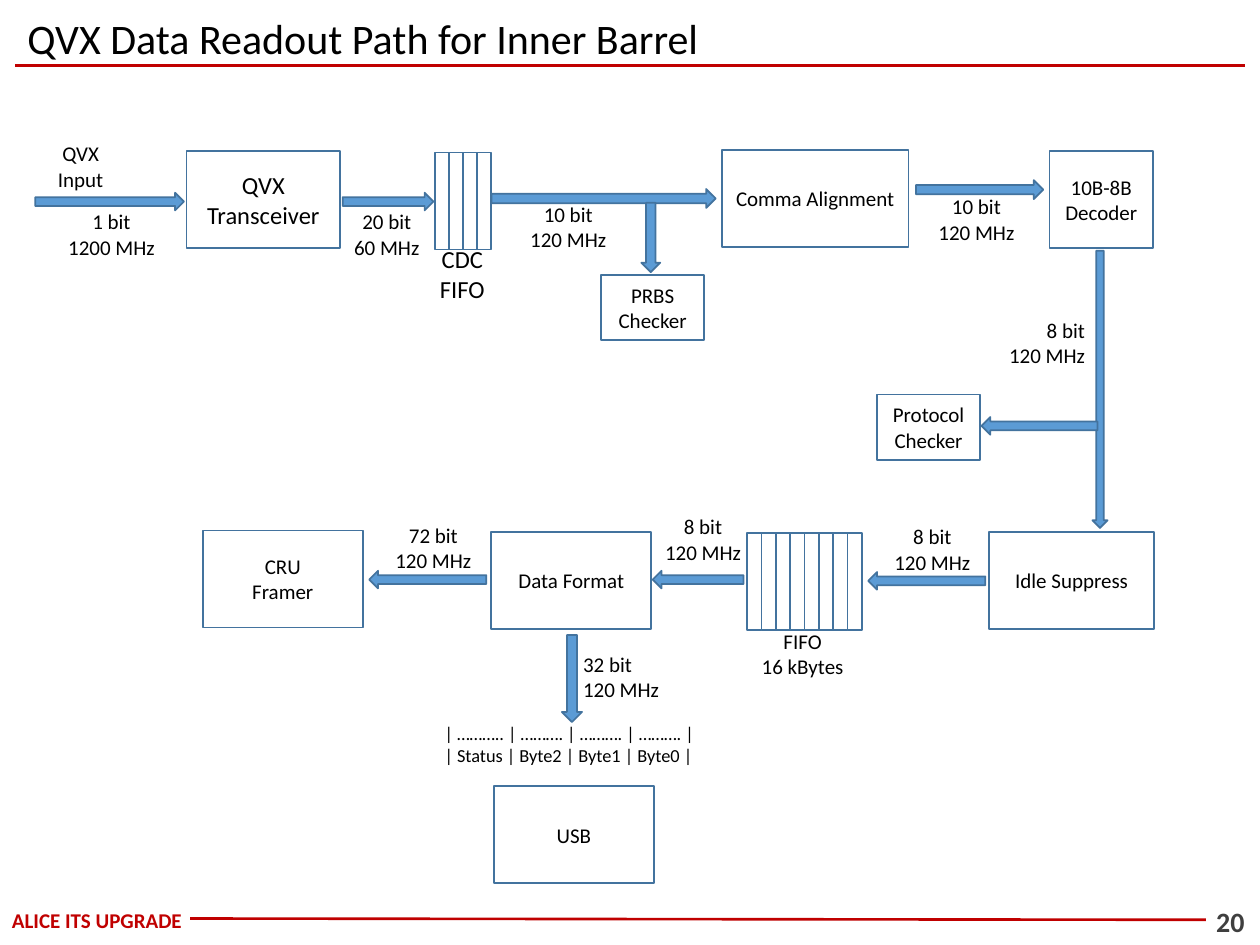
from dataclasses import dataclass

from lxml import etree
from pptx import Presentation
from pptx.dml.color import RGBColor
from pptx.enum.shapes import MSO_CONNECTOR, MSO_SHAPE
from pptx.enum.text import MSO_ANCHOR, PP_ALIGN
from pptx.oxml.ns import qn
from pptx.util import Inches, Pt

RECT = MSO_SHAPE.RECTANGLE
RIGHT, DOWN = MSO_SHAPE.RIGHT_ARROW, MSO_SHAPE.DOWN_ARROW
STRAIGHT = MSO_CONNECTOR.STRAIGHT
TOP, MIDDLE, BOTTOM = MSO_ANCHOR.TOP, MSO_ANCHOR.MIDDLE, MSO_ANCHOR.BOTTOM
AL_LEFT, AL_CENTER, AL_RIGHT = PP_ALIGN.LEFT, PP_ALIGN.CENTER, PP_ALIGN.RIGHT

FONT = "Calibri"
BLACK, GRAY, RED = "000000", "3F3F3F", "C00000"
BLUE, OUTLINE = "5B9BD5", "43739E"
BLOCK_H = 0.77


@dataclass
class Block:
    text: str
    x: float
    y: float
    w: float
    h: float = BLOCK_H
    size: float = 12


@dataclass
class Arrow:
    x: float
    y: float
    w: float
    h: float = 0.14
    kind: int = RIGHT
    rotation: float = 0


@dataclass
class Label:
    text: str
    x: float
    y: float
    w: float = 0.86
    h: float = 0.5
    size: float = 12
    align: int = AL_CENTER
    anchor: int = TOP
    color: str = BLACK
    bold: bool = False
    wrap: bool = True
    insets: tuple = (0.1, 0.05, 0.1, 0.05)


@dataclass
class Fifo:
    x: float
    y: float
    w: float
    cells: int


@dataclass
class Rule:
    x1: float
    y1: float
    x2: float
    y2: float
    width: float


BLOCKS = [
    Block("QVX\nTransceiver", 1.48, 1.2, 1.22, size=14),
    Block("Comma Alignment", 5.73, 1.19, 1.48),
    Block("10B-8B\nDecoder", 8.33, 1.2, 0.82),
    Block("PRBS\nChecker", 4.77, 2.18, 0.82, 0.52),
    Block("Protocol\nChecker", 6.96, 3.13, 0.82, 0.52),
    Block("Idle Suppress", 7.85, 4.22, 1.31),
    Block("Data Format", 3.9, 4.22, 1.27),
    Block("CRU\nFramer", 1.61, 4.21, 1.27),
    Block("USB", 3.92, 6.24, 1.27),
]
FIFOS = [Fifo(3.45, 1.21, 0.45, 4), Fifo(5.93, 4.23, 0.91, 8)]
ARROWS = [
    Arrow(0.28, 1.53, 1.18),
    Arrow(2.72, 1.53, 0.72),
    Arrow(3.9, 1.5, 1.78, 0.15),
    Arrow(5.09, 1.61, 0.15, 0.55, DOWN),
    Arrow(7.27, 1.43, 1.01, 0.15),
    Arrow(8.67, 1.99, 0.12, 2.2, DOWN),
    Arrow(7.79, 3.31, 0.92, rotation=180),
    Arrow(6.89, 4.54, 0.93, rotation=180),
    Arrow(5.18, 4.53, 0.72, rotation=180),
    Arrow(2.93, 4.53, 0.93, rotation=180),
    Arrow(4.46, 5.04, 0.16, 0.69, DOWN),
]
LABELS = [
    Label("QVX Data Readout Path for Inner Barrel", 0.12, 0.05, 9.76, 0.45, 24,
          AL_LEFT, BOTTOM, insets=(0.1, 0, 0.1, 0)),
    Label("ALICE ITS UPGRADE", 0.02, 7.22, 1.5, 0.16, anchor=MIDDLE,
          color=RED, bold=True, insets=(0, 0, 0, 0)),
    Label("20", 9.57, 7.14, 0.39, 0.31, 16, color=GRAY, bold=True,
          wrap=False, insets=(0.04, 0.04, 0.04, 0.04)),
    Label("QVX Input", 0.27, 1.07, 0.74),
    Label("1 bit\n1200 MHz", 0.42, 1.61, 0.93),
    Label("20 bit\n60 MHz", 2.64, 1.61),
    Label("CDC\nFIFO", 3.39, 1.89, 0.56, 0.57, 14),
    Label("10 bit\n120 MHz", 4.09, 1.55, 0.84),
    Label("10 bit\n120 MHz", 7.32, 1.49),
    Label("8 bit\n120 MHz", 7.85, 2.47, align=AL_RIGHT),
    Label("8 bit\n120 MHz", 6.97, 4.11),
    Label("8 bit\n120 MHz", 5.15, 4.03),
    Label("FIFO\n16 kBytes", 5.94, 4.94),
    Label("72 bit\n120 MHz", 3.01, 4.1),
    Label("32 bit\n120 MHz", 4.53, 5.12, align=AL_LEFT),
    Label("| ……….. | ………. | ………. | ………. |\n| Status | Byte2 | Byte1 | Byte0 |",
          3.43, 5.68, 2.25, 0.45, 10.5, AL_LEFT),
]
RULES = [Rule(0.12, 0.52, 9.88, 0.52, 2.25), Rule(9.57, 7.3, 1.51, 7.29, 1.5)]


def rgb(color: str) -> RGBColor:
    return RGBColor.from_string(color)


def write(tf, text: str, size: float, align=AL_CENTER, color=BLACK, bold=False) -> None:
    """Fill a text frame with one paragraph per line of text."""
    font_format = {"name": FONT, "size": Pt(size), "bold": bold}
    for i, line in enumerate(text.split("\n")):
        p = tf.paragraphs[0] if i == 0 else tf.add_paragraph()
        p.alignment = align
        r = p.add_run()
        r.text = line
        for name, value in font_format.items():
            setattr(r.font, name, value)
        r.font.color.rgb = rgb(color)


def add_outlined(shapes, kind, x: float, y: float, w: float, h: float, fill=None):
    sp = shapes.add_shape(kind, Inches(x), Inches(y), Inches(w), Inches(h))
    sp.shadow.inherit = False
    if fill:
        sp.fill.solid()
        sp.fill.fore_color.rgb = rgb(fill)
    else:
        sp.fill.background()
    sp.line.color.rgb = rgb(OUTLINE)
    sp.line.width = Pt(1)
    return sp


def add_block(shapes, block: Block) -> None:
    sp = add_outlined(shapes, RECT, block.x, block.y, block.w, block.h)
    tf = sp.text_frame
    tf.word_wrap = True
    tf.vertical_anchor = MIDDLE
    write(tf, block.text, block.size)


def add_fifo(shapes, fifo: Fifo) -> None:
    group = shapes.add_group_shape()
    cell_w = fifo.w / fifo.cells
    for i in range(fifo.cells):
        add_outlined(group.shapes, RECT, fifo.x + i * cell_w, fifo.y, cell_w, BLOCK_H)


def add_arrow(shapes, arrow: Arrow) -> None:
    sp = add_outlined(shapes, arrow.kind, arrow.x, arrow.y, arrow.w, arrow.h, BLUE)
    sp.rotation = arrow.rotation


def add_label(shapes, label: Label) -> None:
    sp = shapes.add_textbox(*map(Inches, (label.x, label.y, label.w, label.h)))
    tf = sp.text_frame
    tf.word_wrap = label.wrap
    tf.vertical_anchor = label.anchor
    for side, inset in zip(("left", "top", "right", "bottom"), label.insets):
        setattr(tf, f"margin_{side}", Inches(inset))
    write(tf, label.text, label.size, label.align, label.color, label.bold)


def add_rule(shapes, rule: Rule) -> None:
    ends = map(Inches, (rule.x1, rule.y1, rule.x2, rule.y2))
    line = shapes.add_connector(STRAIGHT, *ends)
    line.line.color.rgb = rgb(RED)
    line.line.width = Pt(rule.width)
    etree.SubElement(line._element.spPr, qn("a:effectLst"))


def main() -> None:
    prs = Presentation()
    prs.slide_width, prs.slide_height = Inches(10), Inches(7.5)
    shapes = prs.slides.add_slide(prs.slide_layouts[6]).shapes
    for draw, items in ((add_rule, RULES), (add_block, BLOCKS), (add_fifo, FIFOS),
                        (add_arrow, ARROWS), (add_label, LABELS)):
        for item in items:
            draw(shapes, item)
    prs.save("out.pptx")


if __name__ == "__main__":
    main()
